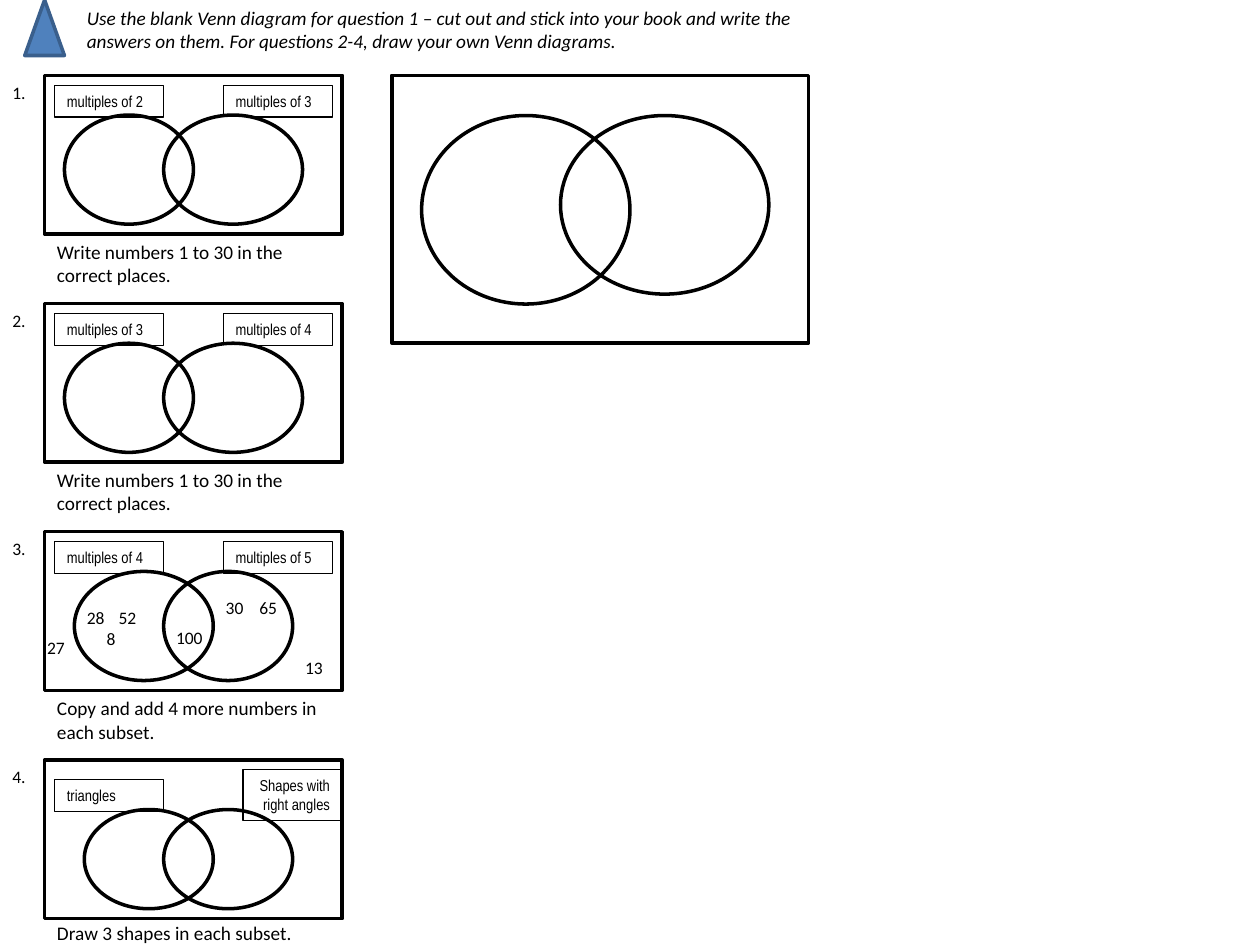
from dataclasses import dataclass
from typing import Optional

from lxml.etree import SubElement
from pptx import Presentation
from pptx.dml.color import RGBColor
from pptx.enum.shapes import MSO_SHAPE
from pptx.enum.text import MSO_ANCHOR, MSO_AUTO_SIZE, PP_ALIGN
from pptx.oxml.ns import qn
from pptx.shapes.autoshape import Shape
from pptx.slide import Slide
from pptx.util import Cm, Pt


@dataclass(frozen=True)
class Theme:
    ink: RGBColor = RGBColor(0, 0, 0)
    paper: RGBColor = RGBColor(255, 255, 255)
    marker: RGBColor = RGBColor(0x4F, 0x81, 0xBD)
    marker_edge: RGBColor = RGBColor(0x3A, 0x5F, 0x8C)
    body_font: str = "Calibri"
    label_font: str = "Arial Narrow"
    body_size: float = 11
    number_size: float = 10
    label_size: float = 9
    thick: float = 2
    thin: float = 0.75


THEME = Theme()


@dataclass(frozen=True)
class Box:
    """Left, top, width and height in centimetres."""
    left: float
    top: float
    width: float
    height: float

    def lengths(self) -> tuple[Cm, Cm, Cm, Cm]:
        return Cm(self.left), Cm(self.top), Cm(self.width), Cm(self.height)

    def down(self, distance: float) -> "Box":
        return Box(self.left, self.top + distance, self.width, self.height)


@dataclass(frozen=True)
class Circle:
    box: Box
    filled: bool = False


@dataclass(frozen=True)
class Label:
    text: str
    box: Box
    align: PP_ALIGN = PP_ALIGN.LEFT


@dataclass(frozen=True)
class Question:
    """One exercise; its boxes are measured from the top of its frame."""
    labels: tuple[Label, Label]
    circles: tuple[Circle, Circle]
    caption: str
    caption_box: Box = Box(0.9, 3.2, 6, 1.2)


FIRST_TOP, PITCH = 1.52, 4.6
FRAME = Box(0.9, 0, 6, 3.2)
NUMBER = Box(0, 0, 0.9, 0.68)
LEFT_LABEL = Box(1.1, 0.2, 2.2, 0.64)
RIGHT_LABEL = Box(4.5, 0.2, 2.2, 0.64)
WIDE_PAIR = (Circle(Box(3.3, 0.8, 2.8, 2.2), True), Circle(Box(1.3, 0.8, 2.6, 2.2)))

QUESTIONS = (
    Question((Label("multiples of 2", LEFT_LABEL), Label("multiples of 3", RIGHT_LABEL)),
             WIDE_PAIR, "Write numbers 1 to 30 in the correct places."),
    Question((Label("multiples of 3", LEFT_LABEL), Label("multiples of 4", RIGHT_LABEL)),
             WIDE_PAIR, "Write numbers 1 to 30 in the correct places."),
    Question((Label("multiples of 4", LEFT_LABEL), Label("multiples of 5", RIGHT_LABEL)),
             (Circle(Box(1.5, 0.8, 2.8, 2.2), True), Circle(Box(3.3, 0.8, 2.6, 2.2))),
             "Copy and add 4 more numbers in each subset."),
    Question((Label("triangles", LEFT_LABEL.down(0.2)),
              Label("Shapes with right angles", Box(4.9, 0.2, 2, 1.02), PP_ALIGN.RIGHT)),
             (Circle(Box(1.7, 1, 2.6, 2)), Circle(Box(3.3, 1, 2.6, 2))),
             "Draw 3 shapes in each subset.", Box(0.9, 3.12, 6, 0.73)),
)

BLANK_FRAME = Box(7.9, FIRST_TOP, 8.4, 5.4)
BLANK_CIRCLES = (Circle(Box(8.5, 2.33, 4.2, 3.8), True), Circle(Box(11.3, 2.33, 4.2, 3.6)))

PLACED_NUMBERS = (
    ("30\t65", Box(4.3, 11.92, 1.6, 0.68)),
    ("100", Box(3.3, 12.52, 1.2, 0.68)),
    ("13", Box(5.9, 13.12, 1, 0.68)),
    ("27", Box(0.7, 12.72, 1, 0.68)),
)


def add_outline(slide: Slide, kind: MSO_SHAPE, box: Box, width: float = THEME.thick,
                fill: Optional[RGBColor] = None, line: RGBColor = THEME.ink) -> Shape:
    shape = slide.shapes.add_shape(kind, *box.lengths())
    shape.shadow.inherit = False
    if fill is None:
        shape.fill.background()
    else:
        shape.fill.solid()
        shape.fill.fore_color.rgb = fill
    shape.line.color.rgb = line
    shape.line.width = Pt(width)
    return shape


def set_text(shape: Shape, text: str, size: float, font: str = THEME.body_font,
             italic: bool = False, align: PP_ALIGN = PP_ALIGN.LEFT) -> None:
    frame = shape.text_frame
    frame.text = text
    frame.word_wrap = True
    frame.auto_size = MSO_AUTO_SIZE.SHAPE_TO_FIT_TEXT
    frame.vertical_anchor = MSO_ANCHOR.TOP
    for paragraph in frame.paragraphs:
        paragraph.alignment = align
        for run in paragraph.runs:
            run.font.name = font
            run.font.size = Pt(size)
            run.font.italic = italic
            run.font.color.rgb = THEME.ink


def add_text(slide: Slide, box: Box, text: str, size: float, italic: bool = False) -> Shape:
    shape = slide.shapes.add_textbox(*box.lengths())
    set_text(shape, text, size, italic=italic)
    return shape


def add_circles(slide: Slide, circles: tuple[Circle, ...], top: float = 0) -> None:
    for circle in circles:
        add_outline(slide, MSO_SHAPE.OVAL, circle.box.down(top),
                    fill=THEME.paper if circle.filled else None)


def add_question(slide: Slide, number: int, question: Question) -> None:
    top = FIRST_TOP + (number - 1) * PITCH
    add_text(slide, NUMBER.down(top), f"{number}.", THEME.number_size)
    add_outline(slide, MSO_SHAPE.RECTANGLE, FRAME.down(top))
    for label in question.labels:
        shape = add_outline(slide, MSO_SHAPE.RECTANGLE, label.box.down(top), THEME.thin)
        set_text(shape, label.text, THEME.label_size, THEME.label_font, align=label.align)
    add_circles(slide, question.circles, top)
    add_text(slide, question.caption_box.down(top), question.caption, THEME.body_size)


def add_numbered_pair(slide: Slide) -> None:
    """The multiples of 4: 28 is the list number of the first line."""
    shape = add_text(slide, Box(1.5, 12.12, 1.8, 1.12), "52\n8", THEME.number_size)
    first, second = (paragraph._p.get_or_add_pPr() for paragraph in shape.text_frame.paragraphs)
    first.set("marL", str(Cm(0.64)))
    first.set("indent", str(Cm(-0.64)))
    SubElement(first, qn("a:buAutoNum"), type="arabicPlain", startAt="28")
    second.set("marL", str(Cm(0.4)))


def add_tab_stop(shape: Shape, position: float) -> None:
    properties = shape.text_frame.paragraphs[0]._p.get_or_add_pPr()
    stops = SubElement(properties, qn("a:tabLst"))
    SubElement(stops, qn("a:tab"), pos=str(Cm(position)), algn="l")


def main() -> None:
    presentation = Presentation()
    presentation.slide_width, presentation.slide_height = Cm(25.4), Cm(19.05)
    slide = presentation.slides.add_slide(presentation.slide_layouts[6])

    add_outline(slide, MSO_SHAPE.ISOSCELES_TRIANGLE, Box(0.5, 0, 0.8, 1.12),
                fill=THEME.marker, line=THEME.marker_edge)
    add_text(slide, Box(1.5, 0, 14.8, 1.2),
             "Use the blank Venn diagram for question 1 – cut out and stick into your book "
             "and write the answers on them. For questions 2-4, draw your own Venn diagrams.",
             THEME.body_size, italic=True)
    for number, question in enumerate(QUESTIONS, start=1):
        add_question(slide, number, question)
    add_outline(slide, MSO_SHAPE.RECTANGLE, BLANK_FRAME)
    add_circles(slide, BLANK_CIRCLES)
    add_numbered_pair(slide)
    for text, box in PLACED_NUMBERS:
        shape = add_text(slide, box, text, THEME.number_size)
        if "\t" in text:
            add_tab_stop(shape, 0.68)
    presentation.save("out.pptx")


if __name__ == "__main__":
    main()
